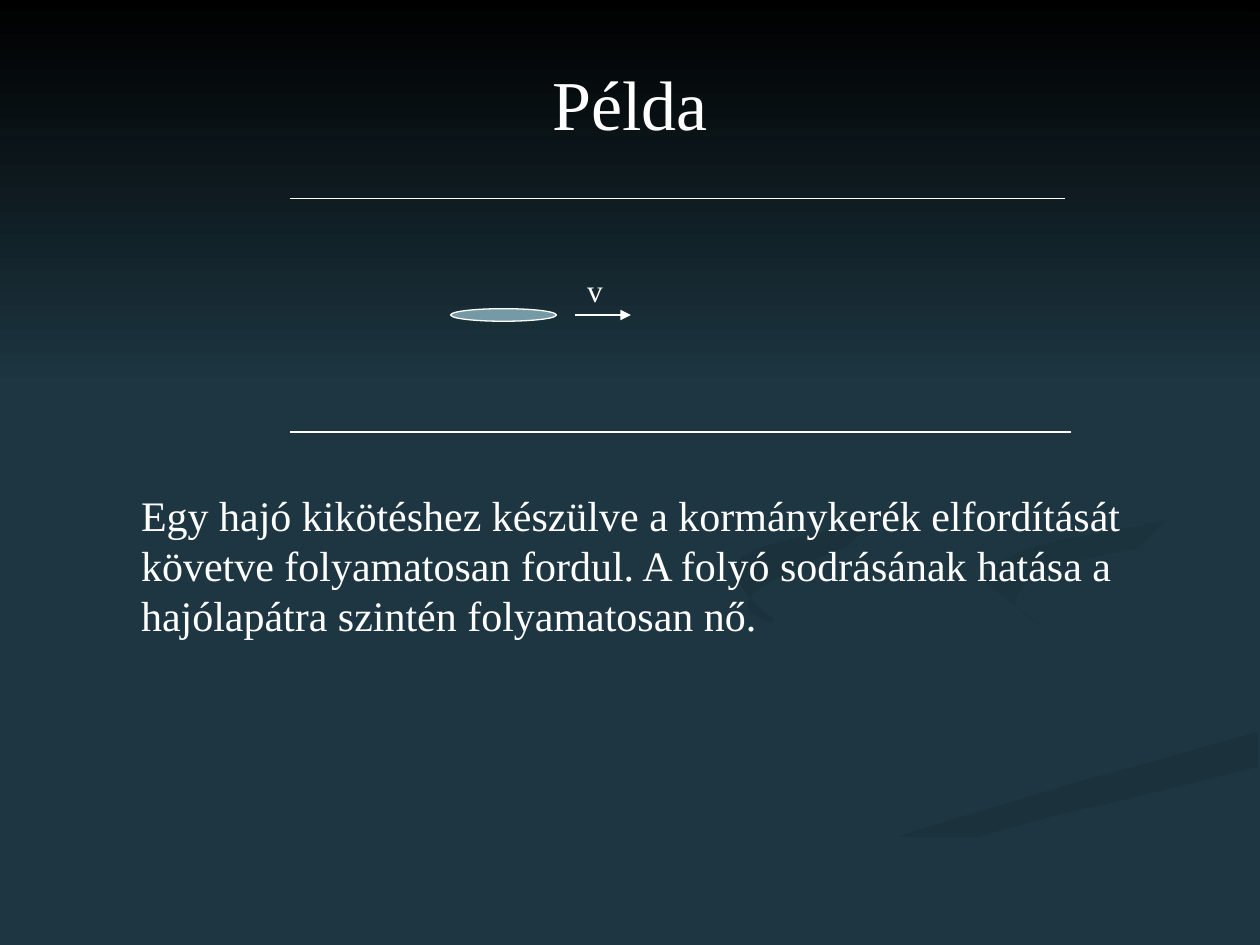
from dataclasses import dataclass
from itertools import chain
from typing import Optional

from lxml import etree
from pptx import Presentation
from pptx import util as u
from pptx.dml.color import RGBColor
from pptx.enum import shapes, text
from pptx.oxml import ns

Point = tuple[float, float]

FONT = "Times New Roman"
WHITE = "FFFFFF"
BACKGROUND = "1D3641"
DARK = "1B323C"
CURVE_STEPS = 6
BEND = [(521, 334), (546, 359), (652, 389), (679, 410)]
RIVER = [(374, 539), (501, 482), (719, 418)]
INNER = [(562, 332), (592, 312), (719, 289)]


@dataclass
class Ribbon:
    edges: list[list[Point]]
    start: str
    end: str = BACKGROUND
    angle: int = 315


@dataclass
class Line:
    left: float
    right: float
    y: float
    arrow: bool = False


@dataclass
class Label:
    content: str
    left: float
    top: float
    width: float
    height: float
    size: float
    centred: bool = False
    inset: bool = True


RIBBONS = [
    Ribbon([[(414, 330), (454, 364), (549, 394), (566, 408), (514, 436), (359, 476), (216, 539)],
            [(260, 539), (406, 479), (562, 436), (562, 398), (451, 361), (414, 330)]],
           BACKGROUND, "1C343E", 0),
    Ribbon([BEND + [(644, 436)], [(644, 436), (661, 418), (603, 386), (521, 334)]],
           BACKGROUND, "1C343E"),
    Ribbon([RIVER, [(719, 438), (541, 484), (411, 539)]], DARK, angle=270),
    Ribbon([BEND + [(535, 463), (343, 539)], RIVER,
            [(719, 387), (599, 359), (562, 332)], INNER,
            [(719, 279), (567, 304), (521, 334)]], BACKGROUND),
    Ribbon([INNER, [(719, 302), (607, 323), (580, 344), (595, 357), (562, 332)]], "1B333D"),
    Ribbon([[(549, 168), (631, 220), (631, 259), (549, 287), (424, 318), (448, 360)],
            [(448, 360), (428, 342), (492, 310), (616, 282), (641, 233), (549, 168)]], DARK),
    Ribbon([[(0, 0), (720, 0)], [(720, 222), (0, 222)]], "000000", angle=270),
]
LINES = [
    Line(165.6, 608.4, 113.5),
    Line(328.5, 360.5, 180, arrow=True),
    Line(165.6, 612, 246.8),
]
LABELS = [
    Label("Példa", 108, 30, 504, 57, 40, centred=True),
    Label("v", 335.5, 155, 10, 21.6, 18, inset=False),
    Label("Egy hajó kikötéshez készülve a kormánykerék elfordítását követve "
          "folyamatosan fordul. A folyó sodrásának hatása a hajólapátra "
          "szintén folyamatosan nő.", 73.5, 276, 574.5, 93.5, 24),
]


def colour(value: str) -> RGBColor:
    return RGBColor.from_string(value)


def smooth(edge: list[Point]) -> list[Point]:
    """Return a Catmull-Rom curve through the points of an edge."""
    padded = [edge[0], *edge, edge[-1]]
    curve = [edge[0]]
    for before, start, end, after in zip(padded, padded[1:], padded[2:], padded[3:]):
        for step in range(1, CURVE_STEPS + 1):
            t = step / CURVE_STEPS
            curve.append(tuple(
                b + t * (c - a + t * (2 * a - 5 * b + 4 * c - d
                                      + t * (3 * b - a - 3 * c + d))) / 2
                for a, b, c, d in zip(before, start, end, after)))
    return [(min(x, 720), min(y, 540)) for x, y in curve]


def paint(shape, fill: str, line: Optional[str] = None) -> None:
    shape.shadow.inherit = False
    shape.fill.solid()
    shape.fill.fore_color.rgb = colour(fill)
    if line:
        shape.line.color.rgb = colour(line)
        shape.line.width = u.Pt(0.75)
    else:
        shape.line.fill.background()


def draw_ribbon(slide, ribbon: Ribbon) -> None:
    first, *rest = chain.from_iterable(map(smooth, ribbon.edges))
    builder = slide.shapes.build_freeform(*first, scale=float(u.Pt(1)))
    builder.add_line_segments(rest, close=True)
    shape = builder.convert_to_shape()
    paint(shape, ribbon.start)
    if ribbon.start != ribbon.end:
        shape.fill.gradient()
        shape.fill.gradient_angle = ribbon.angle
        for stop, value in zip(shape.fill.gradient_stops, (ribbon.start, ribbon.end)):
            stop.color.rgb = colour(value)


def draw_line(slide, line: Line) -> None:
    connector = slide.shapes.add_connector(
        shapes.MSO_CONNECTOR.STRAIGHT,
        u.Pt(line.left), u.Pt(line.y), u.Pt(line.right), u.Pt(line.y))
    connector.line.color.rgb = colour(WHITE)
    connector.line.width = u.Pt(0.75)
    properties = connector._element.spPr
    if line.arrow:
        outline = properties.find(ns.qn("a:ln"))
        etree.SubElement(outline, ns.qn("a:tailEnd"), type="triangle")
    etree.SubElement(properties, ns.qn("a:effectLst"))


def draw_label(slide, label: Label) -> None:
    shape = slide.shapes.add_textbox(
        u.Pt(label.left), u.Pt(label.top), u.Pt(label.width), u.Pt(label.height))
    frame = shape.text_frame
    frame.text = label.content
    frame.word_wrap = True
    if not label.inset:
        frame.margin_left = frame.margin_right = 0
        frame.margin_top = frame.margin_bottom = 0
    paragraph = frame.paragraphs[0]
    if label.centred:
        frame.vertical_anchor = text.MSO_ANCHOR.MIDDLE
        paragraph.alignment = text.PP_ALIGN.CENTER
    font = paragraph.runs[0].font
    font.name = FONT
    font.size = u.Pt(label.size)
    font.color.rgb = colour(WHITE)


def main() -> None:
    presentation = Presentation()
    presentation.slide_width, presentation.slide_height = u.Pt(720), u.Pt(540)
    slide = presentation.slides.add_slide(presentation.slide_layouts[6])
    slide.background.fill.solid()
    slide.background.fill.fore_color.rgb = colour(BACKGROUND)
    for ribbon in RIBBONS:
        draw_ribbon(slide, ribbon)
    for line in LINES:
        draw_line(slide, line)
    ship = slide.shapes.add_shape(
        shapes.MSO_SHAPE.OVAL, u.Pt(257.5), u.Pt(176.4), u.Pt(60.5), u.Pt(7.2))
    paint(ship, "759AA5", WHITE)
    for label in LABELS:
        draw_label(slide, label)
    presentation.save("out.pptx")


if __name__ == "__main__":
    main()
